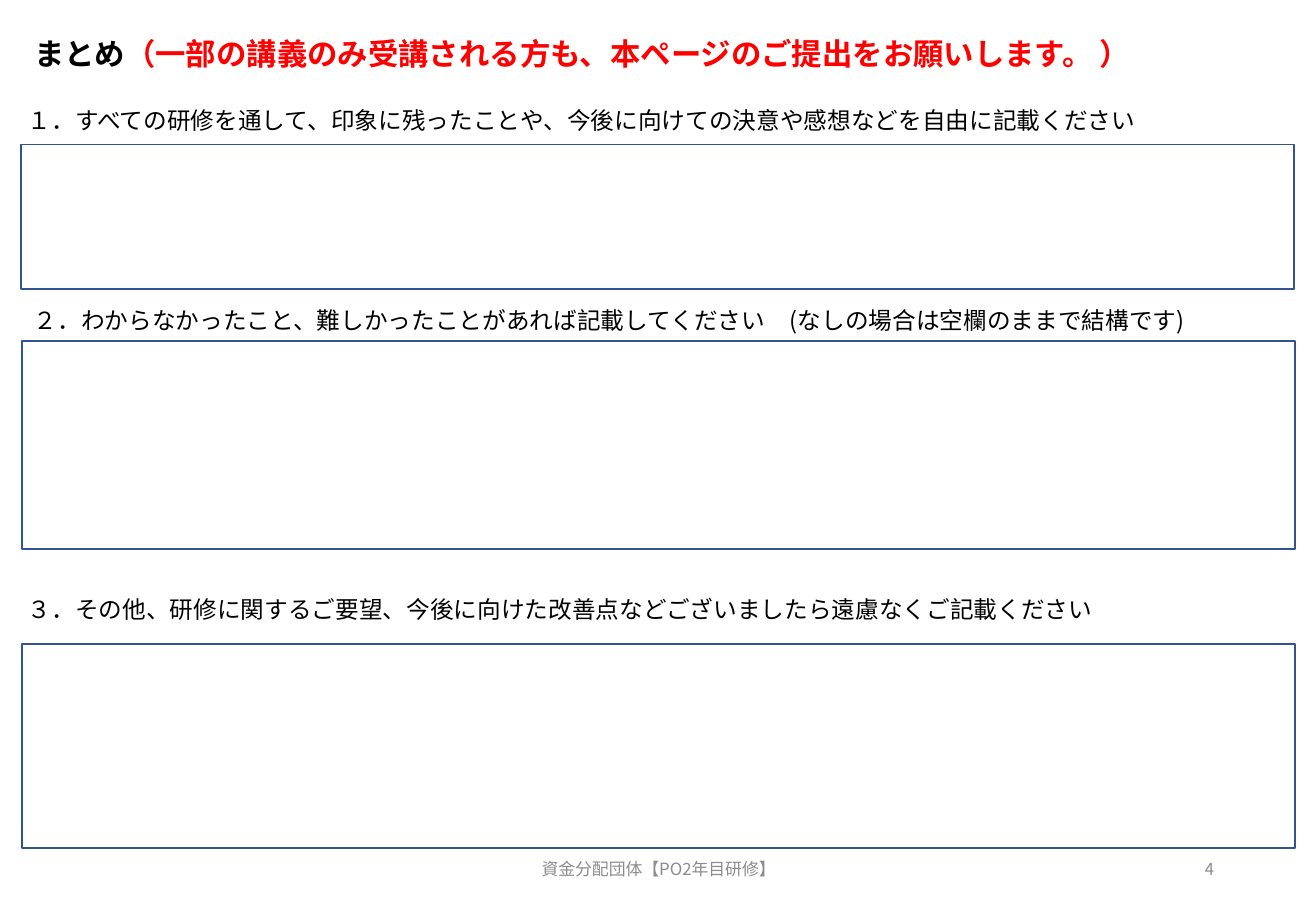
from lxml.etree import SubElement
from pptx import Presentation
from pptx.dml.color import RGBColor
from pptx.enum.shapes import MSO_SHAPE
from pptx.enum.text import MSO_ANCHOR, PP_ALIGN
from pptx.oxml.ns import qn
from pptx.util import Inches, Pt

FONT = "Noto Sans CJK JP"
BLACK = RGBColor(0x00, 0x00, 0x00)
RED = RGBColor(0xFF, 0x00, 0x00)
WHITE = RGBColor(0xFF, 0xFF, 0xFF)
BLUE = RGBColor(0x32, 0x54, 0x91)
GRAY = RGBColor(0x8C, 0x8C, 0x8C)


def add_span(para, text, size, color, bold=False):
    """Add a run with the font set for both Latin and East Asian letters."""
    span = para.add_run()
    span.text = text
    span.font.size = Pt(size)
    span.font.bold = bold
    span.font.color.rgb = color
    span.font.name = FONT
    SubElement(span.font._element, qn("a:ea"), typeface=FONT)


def add_text(place, text, size, color, align=PP_ALIGN.LEFT, anchor=MSO_ANCHOR.TOP):
    box = page.shapes.add_textbox(*map(Inches, place))
    box.text_frame.word_wrap = True
    box.text_frame.vertical_anchor = anchor
    para = box.text_frame.paragraphs[0]
    para.alignment = align
    add_span(para, text, size, color)


deck = Presentation()
deck.slide_width = Inches(10.83)
deck.slide_height = Inches(7.5)
page = deck.slides.add_slide(deck.slide_layouts[5])

title = page.shapes.title
title.left, title.top = Inches(0.18), Inches(-0.04)
title.width, title.height = Inches(9.92), Inches(0.99)
title.text_frame.vertical_anchor = MSO_ANCHOR.MIDDLE
title_para = title.text_frame.paragraphs[0]
title_para.alignment = PP_ALIGN.LEFT
title_para.line_spacing = 0.9
add_span(title_para, "まとめ", 18, BLACK, True)
add_span(title_para, "（一部の講義のみ受講される方も、本ページのご提出をお願いします。 ）", 18, RED, True)

# Question, its left and top, then left, top and height of its answer frame
questions = [
    ("１．すべての研修を通して、印象に残ったことや、今後に向けての決意や感想などを自由に記載ください",
     0.13, 0.82, 0.17, 1.19, 1.19),
    ("２．わからなかったこと、難しかったことがあれば記載してください　(なしの場合は空欄のままで結構です)",
     0.18, 2.47, 0.18, 2.81, 1.71),
    ("３．その他、研修に関するご要望、今後に向けた改善点などございましたら遠慮なくご記載ください",
     0.13, 4.85, 0.18, 5.3, 1.68),
]
for question, left, top, frame_left, frame_top, frame_height in questions:
    frame = page.shapes.add_shape(
        MSO_SHAPE.RECTANGLE, Inches(frame_left), Inches(frame_top),
        Inches(10.48), Inches(frame_height))
    frame.shadow.inherit = False
    frame.fill.solid()
    frame.fill.fore_color.rgb = WHITE
    frame.line.color.rgb = BLUE
    frame.line.width = Pt(1)
    add_text((left, top, 10.48, 0.34), question, 14, BLACK)

add_text((3.59, 6.95, 3.66, 0.4), "資金分配団体【PO2年目研修】", 10, GRAY,
         PP_ALIGN.CENTER, MSO_ANCHOR.MIDDLE)
add_text((7.65, 6.95, 2.44, 0.4), "4", 9.8, GRAY, PP_ALIGN.RIGHT, MSO_ANCHOR.MIDDLE)

deck.save("out.pptx")
